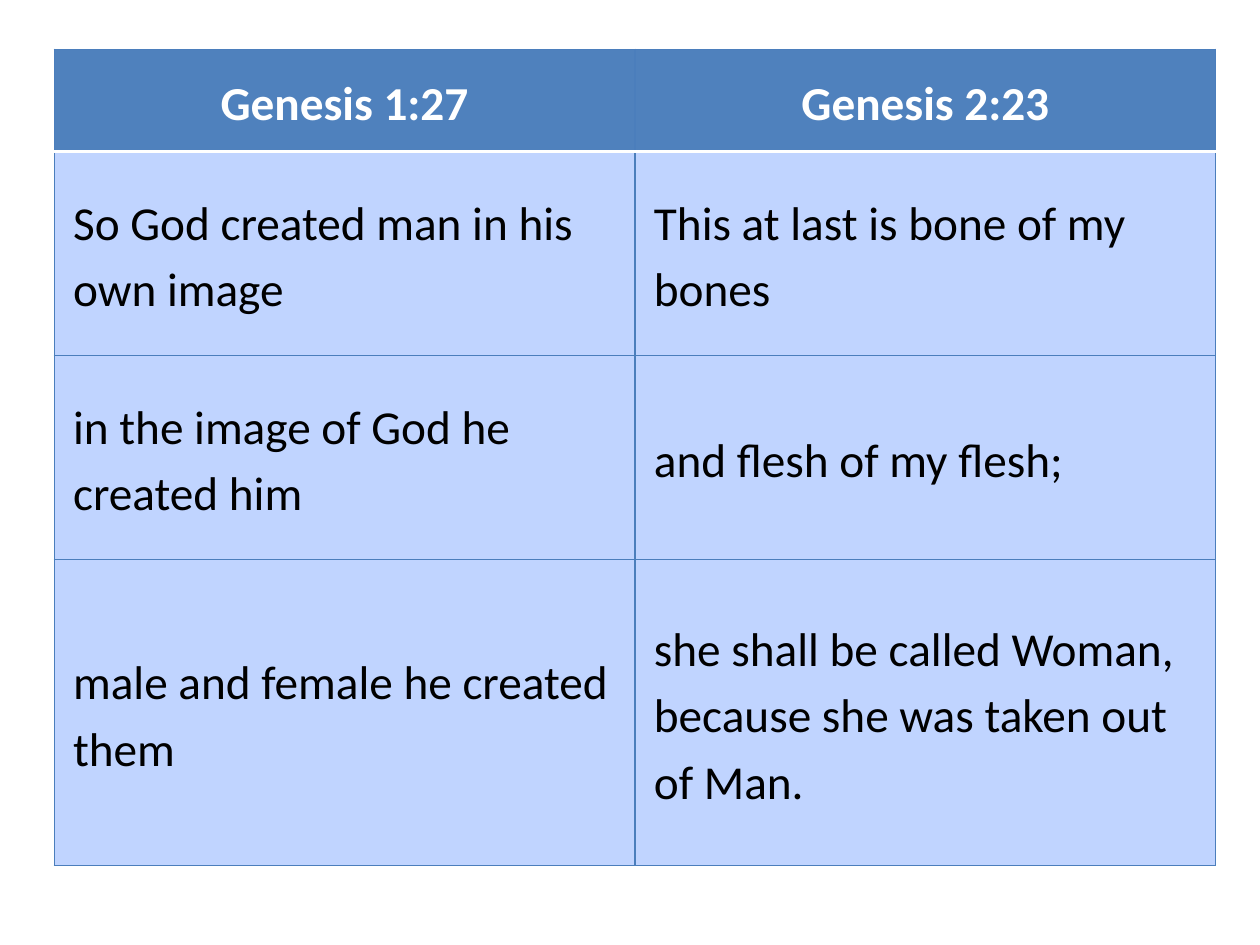
from lxml.etree import SubElement
from pptx import Presentation
from pptx.dml.color import RGBColor
from pptx.enum.text import MSO_ANCHOR, PP_ALIGN
from pptx.oxml.ns import qn
from pptx.util import Inches, Pt

HEADER_FILL = RGBColor(0x4F, 0x81, 0xBD)
BODY_FILL = RGBColor(0xC0, 0xD4, 0xFF)
GRID_LINE = RGBColor(0x4B, 0x7E, 0xBC)
WHITE = RGBColor(0xFF, 0xFF, 0xFF)
BLACK = RGBColor(0x00, 0x00, 0x00)

VERSES = [
    ("Genesis 1:27", "Genesis 2:23"),
    ("So God created man in his own image", "This at last is bone of my bones"),
    ("in the image of God he created him", "and flesh of my flesh;"),
    ("male and female he created them",
     "she shall be called Woman, because she was taken out of Man."),
]
ROW_UNITS = [1, 2, 2, 3]  # row heights, in header rows
ROW_UNIT = Inches(0.81)
COLUMN_WIDTH = Inches(4.61)


def add_border(cell, side, color, width):
    line = SubElement(cell._tc.get_or_add_tcPr(), qn(f"a:ln{side}"), w=str(Pt(width)))
    fill = SubElement(line, qn("a:solidFill"))
    SubElement(fill, qn("a:srgbClr"), val=str(color))


presentation = Presentation()
presentation.slide_width, presentation.slide_height = Inches(10), Inches(7.5)
slide = presentation.slides.add_slide(presentation.slide_layouts[6])

# Table grid
table = slide.shapes.add_table(
    len(VERSES), 2, Inches(0.43), Inches(0.39),
    2 * COLUMN_WIDTH, sum(ROW_UNITS) * ROW_UNIT).table
table.horz_banding = False
for column in table.columns:
    column.width = COLUMN_WIDTH
for row, units in zip(table.rows, ROW_UNITS):
    row.height = units * ROW_UNIT

# Cells: header row, then the verses side by side
for row_index, texts in enumerate(VERSES):
    is_header = row_index == 0
    for column_index, text in enumerate(texts):
        cell = table.cell(row_index, column_index)

        # Borders come before the fill; a white rule parts header and body
        for side in "LRTB":
            under_header = (row_index, side) in [(0, "B"), (1, "T")]
            add_border(cell, side, WHITE if under_header else GRID_LINE,
                       2 if under_header else 0.75)
        cell.fill.solid()
        cell.fill.fore_color.rgb = HEADER_FILL if is_header else BODY_FILL

        cell.vertical_anchor = MSO_ANCHOR.MIDDLE
        cell.margin_left = cell.margin_right = Inches(0.01 if is_header else 0.15)
        cell.margin_top = cell.margin_bottom = Inches(0.01 if is_header else 0.2)

        cell.text = text
        paragraph = cell.text_frame.paragraphs[0]
        paragraph.alignment = PP_ALIGN.CENTER if is_header else PP_ALIGN.LEFT
        paragraph.line_spacing = 1.15
        paragraph.space_after = Pt(10)
        paragraph.font.name = "Calibri"
        paragraph.font.size = Pt(27)
        paragraph.font.bold = is_header
        paragraph.font.color.rgb = WHITE if is_header else BLACK

presentation.save("out.pptx")
